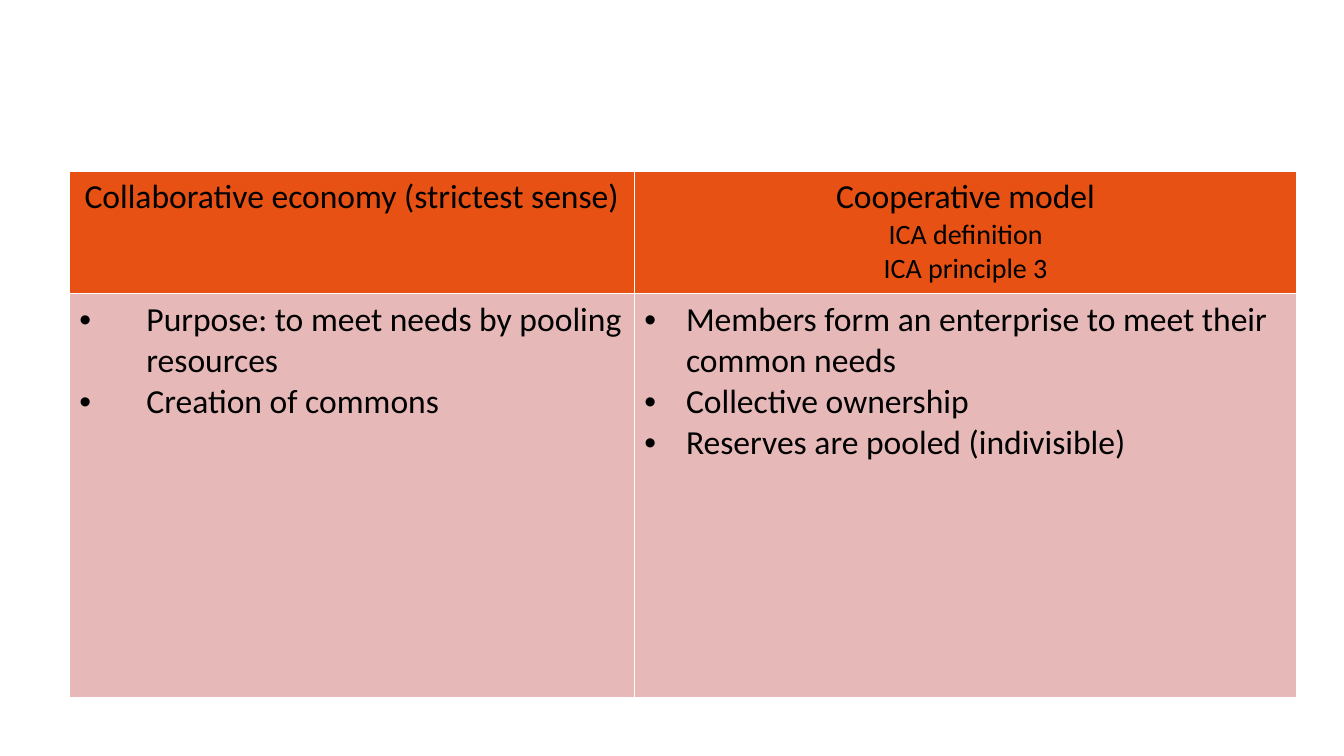
from lxml import etree
from pptx import Presentation
from pptx.dml.color import RGBColor
from pptx.enum.text import MSO_ANCHOR, PP_ALIGN
from pptx.oxml.ns import qn
from pptx.util import Pt

PX = 4572
FONT = "Calibri"
BLACK = RGBColor(0x00, 0x00, 0x00)
WHITE = RGBColor(0xFF, 0xFF, 0xFF)
ORANGE = RGBColor(0xE7, 0x51, 0x13)
PINK = RGBColor(0xE6, 0xB9, 0xB8)
CENTER = PP_ALIGN.CENTER
LEFT = PP_ALIGN.LEFT
TOP = MSO_ANCHOR.TOP

HEADINGS = [
    ["Collaborative economy (strictest sense)"],
    ["Cooperative model", "ICA definition", "ICA principle 3"],
]
POINTS = [
    ["Purpose: to meet needs by pooling resources", "Creation of commons"],
    [
        "Members form an enterprise to meet their common needs",
        "Collective ownership",
        "Reserves are pooled (indivisible)",
    ],
]
POINT_INDENTS = [100, 62]


class SlideBuilder:
    def __init__(self, deck):
        self.page = deck.slides.add_slide(deck.slide_layouts[6])
        self.font = FONT
        self.color = BLACK
        self.main_size = 18
        self.detail_size = 15

    def table(self, left, top, widths, heights):
        frame = self.page.shapes.add_table(
            len(heights), len(widths), left * PX, top * PX,
            sum(widths) * PX, sum(heights) * PX)
        table = frame.table
        table.first_row = False
        table.horz_banding = False
        for column, width in zip(table.columns, widths):
            column.width = width * PX
        for row, height in zip(table.rows, heights):
            row.height = height * PX
        return table

    def borders(self, cell):
        properties = cell._tc.get_or_add_tcPr()
        for side in ("a:lnL", "a:lnR", "a:lnT", "a:lnB"):
            line = etree.SubElement(properties, qn(side), w=str(Pt(1)))
            fill = etree.SubElement(line, qn("a:solidFill"))
            etree.SubElement(fill, qn("a:srgbClr"), val=str(WHITE))

    def cell(self, cell, lines, fill):
        self.borders(cell)
        cell.fill.solid()
        cell.fill.fore_color.rgb = fill
        cell.margin_left = cell.margin_right = 15 * PX
        cell.margin_top = cell.margin_bottom = 8 * PX
        cell.vertical_anchor = TOP
        cell.text_frame.text = "\n".join(lines)
        return cell.text_frame.paragraphs

    def style(self, para, size, align):
        para.alignment = align
        for span in para.runs:
            span.font.name = self.font
            span.font.size = Pt(size)
            span.font.bold = False
            span.font.color.rgb = self.color

    def heading(self, cell, lines):
        for index, para in enumerate(self.cell(cell, lines, ORANGE)):
            size = self.detail_size if index else self.main_size
            self.style(para, size, CENTER)

    def bullets(self, cell, lines, indent):
        for para in self.cell(cell, lines, PINK):
            properties = para._p.get_or_add_pPr()
            properties.set("marL", str(indent * PX))
            properties.set("indent", str(-indent * PX))
            etree.SubElement(properties, qn("a:buFont"), typeface="Arial")
            etree.SubElement(properties, qn("a:buChar"), char="•")
            self.style(para, self.main_size, LEFT)


def main():
    deck = Presentation()
    deck.slide_width = 2000 * PX
    deck.slide_height = 1125 * PX
    builder = SlideBuilder(deck)
    table = builder.table(103, 255, [841, 986], [182, 601])
    for column, indent in enumerate(POINT_INDENTS):
        builder.heading(table.cell(0, column), HEADINGS[column])
        builder.bullets(table.cell(1, column), POINTS[column], indent)
    deck.save("out.pptx")


if __name__ == "__main__":
    main()
